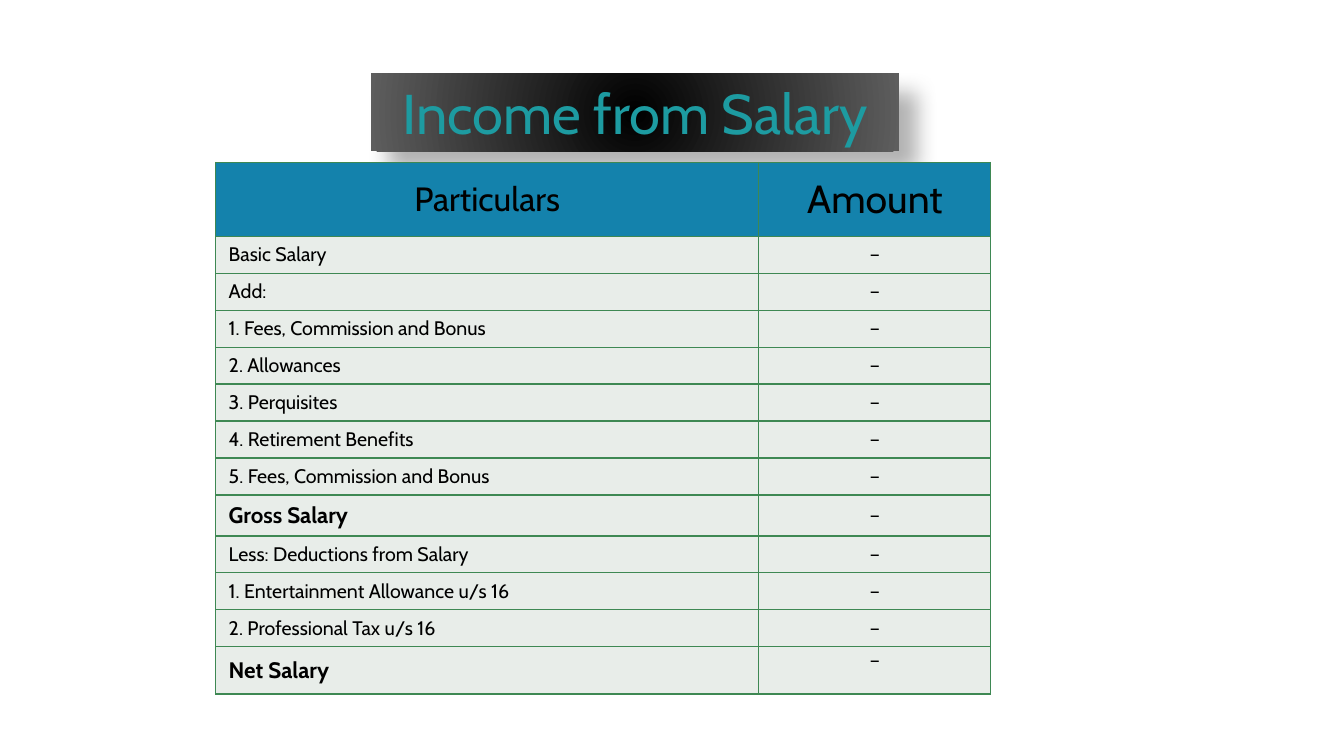
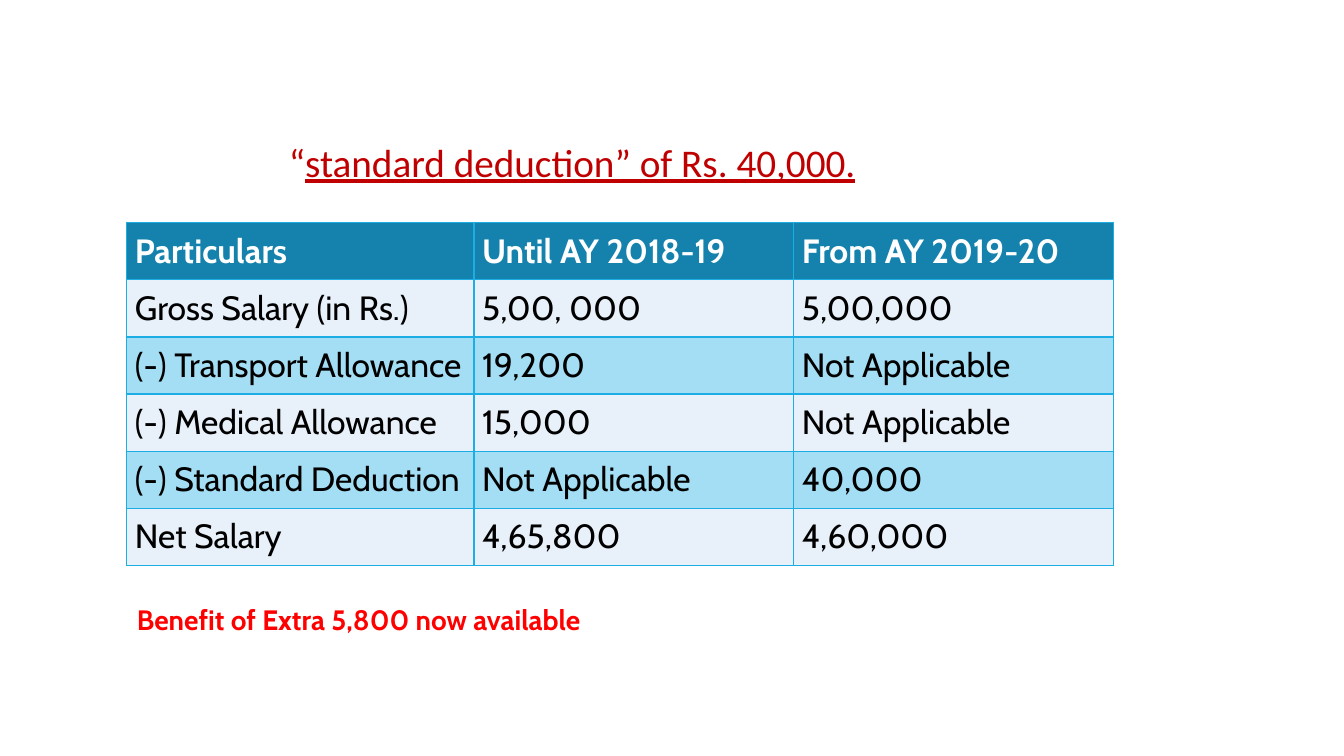
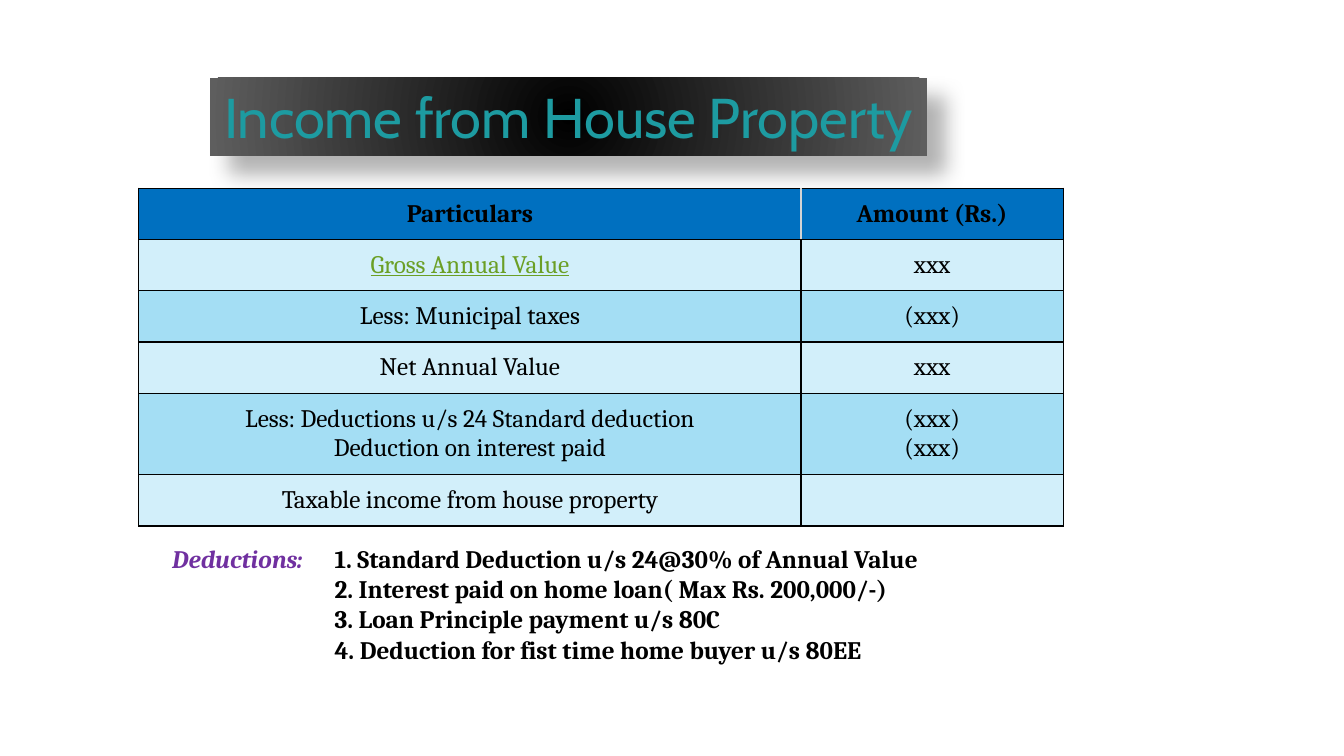
import pptx
import pptx.dml.color
import pptx.enum.shapes
import pptx.enum.text
import pptx.oxml
import pptx.oxml.ns
import pptx.util
from lxml import etree

Pt = pptx.util.Pt
RGB = pptx.dml.color.RGBColor
ALIGN = pptx.enum.text.PP_ALIGN
ANCHOR = pptx.enum.text.MSO_ANCHOR
NS = pptx.oxml.ns.nsdecls("a")

# Shared fonts and colours
BODY_FONT, SERIF_FONT, HEADING_FONT = "Cabin", "Cambria", "Calibri"
BLACK = RGB(0x00, 0x00, 0x00)
WHITE = RGB(0xFF, 0xFF, 0xFF)
CHARCOAL = RGB(0x5E, 0x5E, 0x5E)
TEAL = RGB(0x1D, 0x9B, 0xA1)
HEADER_BLUE = RGB(0x14, 0x82, 0xAC)
STRONG_BLUE = RGB(0x00, 0x70, 0xC0)
SKY = RGB(0xA4, 0xDE, 0xF4)
PALE_SKY = RGB(0xD2, 0xEF, 0xFA)
PALE_BLUE = RGB(0xE8, 0xF1, 0xFA)
PALE_GREEN = RGB(0xE8, 0xED, 0xE9)
GREEN_LINE = RGB(0x3E, 0x88, 0x53)
BLUE_LINE = RGB(0x1C, 0xAD, 0xE4)
GREY_LINE = RGB(0xD4, 0xD4, 0xD4)
DARK_RED = RGB(0xC0, 0x00, 0x00)
RED = RGB(0xFF, 0x00, 0x00)
PURPLE = RGB(0x70, 0x30, 0xA0)
LINK_GREEN = RGB(0x6B, 0x9F, 0x25)


def style(font, name, size, color, bold=False, underline=False):
    font.name, font.size, font.bold = name, Pt(size), bold
    font.color.rgb = color
    if underline:
        font.underline = True


def title_band(slide, box, text):
    """Title on a radial dark band with a soft shadow."""
    band = slide.shapes.add_shape(
        pptx.enum.shapes.MSO_SHAPE.RECTANGLE, *map(Pt, box))
    band.line.fill.background()
    properties = band.fill._xPr
    geometry = properties.find(pptx.oxml.ns.qn("a:prstGeom"))
    gradient = pptx.oxml.parse_xml(
        f'<a:gradFill {NS} rotWithShape="1"><a:gsLst>'
        f'<a:gs pos="0"><a:srgbClr val="{BLACK}"/></a:gs>'
        f'<a:gs pos="100000"><a:srgbClr val="{CHARCOAL}"/></a:gs></a:gsLst>'
        '<a:path path="circle"><a:fillToRect l="100000" t="100000" '
        'r="100000" b="100000"/></a:path></a:gradFill>')
    geometry.addnext(gradient)
    properties.append(pptx.oxml.parse_xml(
        f'<a:effectLst {NS}><a:outerShdw blurRad="{Pt(15)}" dist="{Pt(18)}" '
        'dir="2700000" algn="tl" rotWithShape="0">'
        f'<a:srgbClr val="{BLACK}"><a:alpha val="30000"/></a:srgbClr>'
        '</a:outerShdw></a:effectLst>'))
    frame = band.text_frame
    frame.word_wrap = True
    frame.auto_size = pptx.enum.text.MSO_AUTO_SIZE.SHAPE_TO_FIT_TEXT
    frame.vertical_anchor = ANCHOR.TOP
    title = frame.paragraphs[0]
    title.text, title.alignment = text, ALIGN.CENTER
    style(title.font, BODY_FONT, 40, TEAL)


def text_area(slide, box):
    frame = slide.shapes.add_textbox(*map(Pt, box)).text_frame
    frame.word_wrap = True
    frame.auto_size = pptx.enum.text.MSO_AUTO_SIZE.SHAPE_TO_FIT_TEXT
    return frame


def set_borders(cell, color, **sides):
    """Draw four 1 pt sides; L, R, T or B overrides one colour."""
    properties = cell._tc.get_or_add_tcPr()
    for position, side in enumerate("LRTB"):
        properties.insert(position, pptx.oxml.parse_xml(
            f'<a:ln{side} {NS} w="{Pt(1)}"><a:solidFill>'
            f'<a:srgbClr val="{sides.get(side, color)}"/>'
            f'</a:solidFill></a:ln{side}>'))


def add_grid(slide, left, top, widths, heights):
    frame = slide.shapes.add_table(
        len(heights), len(widths), Pt(left), Pt(top),
        Pt(sum(widths)), Pt(sum(heights)))
    table = frame.table
    table.first_row = table.horz_banding = False
    for column, width in zip(table.columns, widths):
        column.width = Pt(width)
    for row, height in zip(table.rows, heights):
        row.height = Pt(height)
    return table


def fill_cell(cell, text, fill, inset_x, inset_y, anchor, align):
    """Fill and inset a cell, then return its paragraph for styling."""
    cell.fill.solid()
    cell.fill.fore_color.rgb = fill
    cell.margin_left = cell.margin_right = Pt(inset_x)
    cell.margin_top = cell.margin_bottom = Pt(inset_y)
    cell.vertical_anchor = anchor
    paragraph = cell.text_frame.paragraphs[0]
    paragraph.text, paragraph.alignment = text, align
    return paragraph


def salary_table(slide, left, top):
    items = ["Basic Salary", "Add:", "1. Fees, Commission and Bonus",
             "2. Allowances", "3. Perquisites", "4. Retirement Benefits",
             "5. Fees, Commission and Bonus", "Gross Salary",
             "Less: Deductions from Salary",
             "1. Entertainment Allowance u/s 16",
             "2. Professional Tax u/s 16", "Net Salary"]
    special_heights = {"Gross Salary": 29.3, "Net Salary": 33.8}
    heights = [52.8] + [special_heights.get(item, 26.4) for item in items]
    table = add_grid(slide, left, top, [388, 165.8], heights)
    # Header
    for column, (label, size) in enumerate([("Particulars", 24), ("Amount", 28)]):
        cell = table.cell(0, column)
        heading = fill_cell(cell, label, HEADER_BLUE, 9.4, 9.4,
                            ANCHOR.MIDDLE, ALIGN.CENTER)
        style(heading.font, BODY_FONT, size, BLACK)
        set_borders(cell, GREEN_LINE)
    # Items and their dashes
    for row, item in enumerate(items, 1):
        is_total = item in special_heights
        name_cell, amount_cell = table.cell(row, 0), table.cell(row, 1)
        name = fill_cell(name_cell, item, PALE_GREEN, 9.4, 4.7,
                         ANCHOR.MIDDLE, ALIGN.LEFT)
        style(name.font, BODY_FONT, 16 if is_total else 14, BLACK, is_total)
        layout = ((4.3, 2.2, ANCHOR.TOP) if item == "Net Salary"
                  else (9.4, 4.7, ANCHOR.MIDDLE))
        amount = fill_cell(amount_cell, "—", PALE_GREEN, *layout, ALIGN.CENTER)
        style(amount.font, BODY_FONT, 12, BLACK)
        for cell in (name_cell, amount_cell):
            set_borders(cell, GREEN_LINE)


def deduction_table(slide, left, top):
    rows = [("Particulars", "Until AY 2018-19", "From AY 2019-20"),
            ("Gross Salary (in Rs.)", "5,00, 000", "5,00,000"),
            ("(-) Transport Allowance", "19,200", "Not Applicable"),
            ("(-) Medical Allowance", "15,000", "Not Applicable"),
            ("(-) Standard Deduction", "Not Applicable", "40,000"),
            ("Net Salary", "4,65,800", "4,60,000")]
    table = add_grid(slide, left, top, [248, 228.4, 228.4], [40.8] * len(rows))
    for r, values in enumerate(rows):
        is_header = r == 0
        fill = HEADER_BLUE if is_header else (SKY, PALE_BLUE)[r % 2]
        for c, value in enumerate(values):
            cell = table.cell(r, c)
            entry = fill_cell(cell, value, fill, 5.8, 5.8,
                              ANCHOR.TOP, ALIGN.LEFT)
            style(entry.font, BODY_FONT, 24,
                  WHITE if is_header else BLACK, is_header)
            set_borders(cell, BLUE_LINE)


def property_table(slide, left, top):
    rows = [("Particulars", "Amount (Rs.)"),
            ("Gross Annual Value", "xxx"),
            ("Less: Municipal taxes", "(xxx)"),
            ("Net Annual Value", "xxx"),
            ("Less: Deductions u/s 24 Standard deduction\n"
             "Deduction on interest paid", "(xxx)\n(xxx)"),
            ("Taxable income from house property", "")]
    heights = [58.2 if "\n" in name else 36.6 for name, _ in rows]
    table = add_grid(slide, left, top, [473, 187.2], heights)
    for r, values in enumerate(rows):
        is_header = r == 0
        fill = STRONG_BLUE if is_header else (SKY, PALE_SKY)[r % 2]
        for c, value in enumerate(values):
            cell = table.cell(r, c)
            entry = fill_cell(cell, value, fill, 7.2, 7.2,
                              ANCHOR.MIDDLE, ALIGN.CENTER)
            is_link = value == "Gross Annual Value"
            style(entry.font, SERIF_FONT, 18,
                  LINK_GREEN if is_link else BLACK, is_header, is_link)
            inner_side = {"RL"[c]: GREY_LINE} if is_header else {}
            set_borders(cell, BLACK, **inner_side)


def deduction_heading(slide, box):
    frame = text_area(slide, box)
    frame.margin_left = Pt(11.3)
    heading = frame.paragraphs[0]
    style(heading.font, HEADING_FONT, 28, DARK_RED)
    heading.add_run().text = "“"
    underlined = heading.add_run()
    underlined.text = "standard deduction” of Rs. 40,000."
    underlined.font.underline = True


def benefit_note(slide, box):
    note = text_area(slide, box).paragraphs[0]
    note.text = "Benefit of Extra 5,800 now available"
    style(note.font, BODY_FONT, 20, RED, True)


def deduction_list(slide, box, indent):
    """Label and numbered lines that share one indent."""
    frame = text_area(slide, box)
    lines = ["1. Standard Deduction u/s 24@30% of Annual Value",
             "2. Interest paid on home loan( Max Rs. 200,000/-)",
             "3. Loan Principle payment u/s 80C",
             "4. Deduction for fist time home buyer u/s 80EE"]
    for number, line in enumerate(lines):
        paragraph = frame.add_paragraph() if number else frame.paragraphs[0]
        style(paragraph.font, SERIF_FONT, 18, BLACK, True)
        properties = paragraph._p.get_or_add_pPr()
        if number:
            properties.set("marL", str(Pt(indent)))
        else:
            label = paragraph.add_run()
            label.text = "Deductions:"
            label.font.italic = True
            label.font.color.rgb = PURPLE
            line = "\t" + line
            properties.insert(0, pptx.oxml.parse_xml(
                f'<a:tabLst {NS}><a:tab pos="{Pt(indent)}" algn="l"/></a:tabLst>'))
        paragraph.add_run().text = line


def salary_slide(slide):
    title_band(slide, (265, 52.4, 377.3, 55.7), "Income from Salary")
    salary_table(slide, 154, 116)


def standard_deduction_slide(slide):
    deduction_heading(slide, (195, 95, 443, 41))
    deduction_table(slide, 90.6, 159.1)
    benefit_note(slide, (90.6, 427, 652, 31.5))


def house_property_slide(slide):
    title_band(slide, (150.2, 55.5, 512, 55.7), "Income from House Property")
    property_table(slide, 99.2, 134.5)
    deduction_list(slide, (115.9, 384.5, 702.7, 94.3), 116)


def main():
    deck = pptx.Presentation()
    deck.slide_width, deck.slide_height = Pt(960), Pt(540)
    for build in (salary_slide, standard_deduction_slide, house_property_slide):
        build(deck.slides.add_slide(deck.slide_layouts[6]))
    deck.save("out.pptx")


if __name__ == "__main__":
    main()
